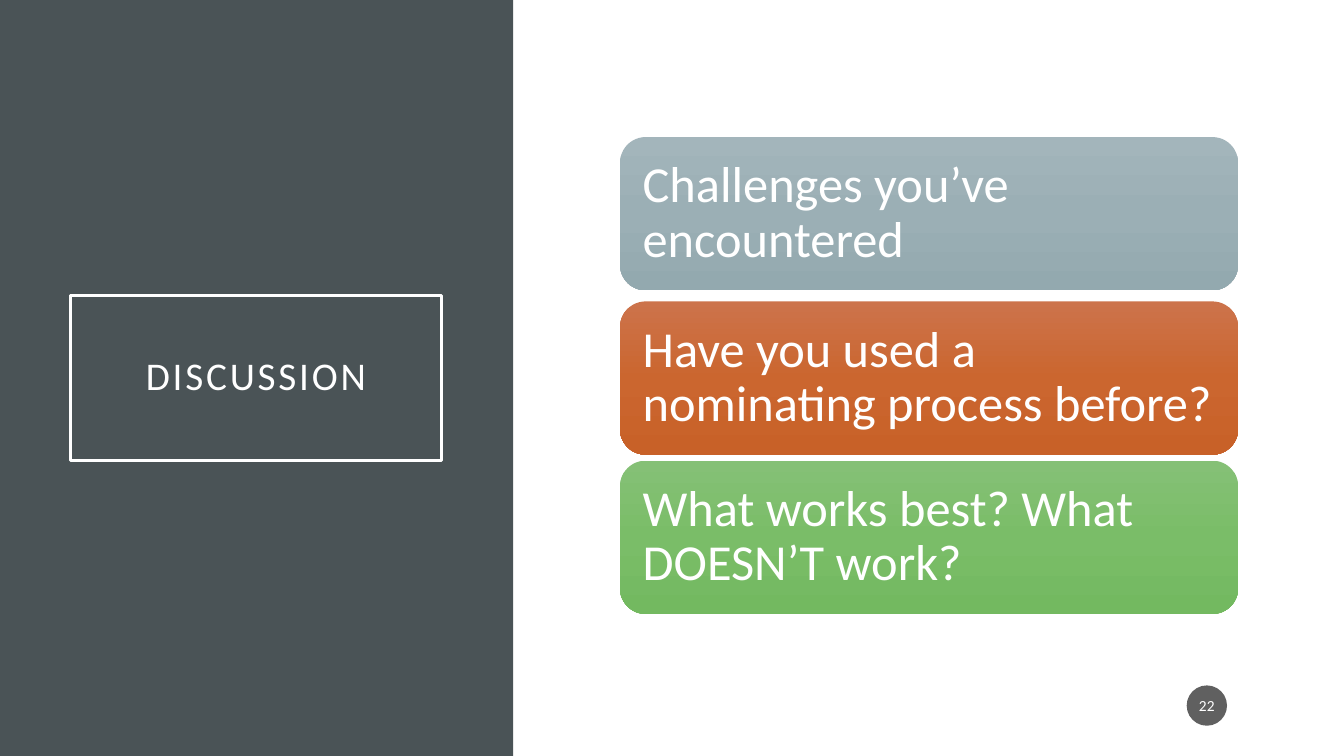
from dataclasses import dataclass

from lxml import etree
from pptx import Presentation
from pptx.dml.color import RGBColor
from pptx.enum.shapes import MSO_SHAPE
from pptx.enum.text import MSO_ANCHOR, MSO_AUTO_SIZE, PP_ALIGN
from pptx.oxml.ns import qn
from pptx.util import Pt

RECT, ROUND, OVAL = MSO_SHAPE.RECTANGLE, MSO_SHAPE.ROUNDED_RECTANGLE, MSO_SHAPE.OVAL
MIDDLE, FIXED = MSO_ANCHOR.MIDDLE, MSO_AUTO_SIZE.NONE
LEFT, CENTER = PP_ALIGN.LEFT, PP_ALIGN.CENTER
PX = 9144


@dataclass(frozen=True)
class Theme:
    """Hold the colours and type sizes of the slide."""
    font: str = "Calibri"
    white: str = "FFFFFF"
    slate: str = "4A5356"
    dark: str = "1D1D1D"
    gray: tuple = ("A3B5BB", "9BAFB5", "93A9AF")
    rust: tuple = ("CC734B", "CB662F", "C86128")
    green: tuple = ("85C076", "7ABD68", "73B960")
    title: int = 28
    card: int = 36
    badge: int = 11


THEME = Theme()
CARDS = (
    (0, "Challenges you’ve encountered", THEME.gray),
    (163, "Have you used a nominating process before?", THEME.rust),
    (321, "What works best? What DOESN’T work?", THEME.green),
)


def apply(item, values):
    """Set each named value on the item."""
    for name, value in values.items():
        setattr(item, name, value)


def place(shape, box):
    """Move the shape to a box given in px."""
    apply(shape, dict(zip(("left", "top", "width", "height"), (n * PX for n in box))))


def block(slide, kind, box):
    """Add a preset shape without line or shadow."""
    shape = slide.shapes.add_shape(kind, *(n * PX for n in box))
    shape.shadow.inherit = False
    shape.line.fill.background()
    return shape


def paint(shape, color):
    """Fill the shape with one colour."""
    shape.fill.solid()
    shape.fill.fore_color.rgb = RGBColor.from_string(color)


def shade(shape, colors):
    """Fill the shape from top to bottom with evenly spaced colours."""
    shape.fill.gradient()
    shape.fill.gradient_angle = 270
    stops = shape._element.spPr.find(qn("a:gradFill")).find(qn("a:gsLst"))
    for stop in list(stops):
        stops.remove(stop)
    for i, color in enumerate(colors):
        pos = str(100000 * i // (len(colors) - 1))
        stop = etree.SubElement(stops, qn("a:gs"), pos=pos)
        etree.SubElement(stop, qn("a:srgbClr"), val=color)


def write(shape, text, size, align, pad, lead=1.0):
    """Write white text in the shape and return its run."""
    frame = shape.text_frame
    across, down = (n * PX for n in pad)
    apply(frame, {
        "word_wrap": True, "auto_size": FIXED, "vertical_anchor": MIDDLE,
        "margin_left": across, "margin_right": across,
        "margin_top": down, "margin_bottom": down,
    })
    para = frame.paragraphs[0]
    apply(para, {"alignment": align, "line_spacing": lead})
    run = para.add_run()
    run.text = text
    apply(run.font, {"name": THEME.font, "size": Pt(size)})
    run.font.color.rgb = RGBColor.from_string(THEME.white)
    return run


def panel(slide, box):
    """Draw the side panel with the framed title on it."""
    x, y, w, h = box
    side = block(slide, RECT, box)
    paint(side, THEME.slate)
    title = slide.shapes.title
    title._element.addprevious(side._element)
    place(title, (x + 70, y + 293, w - 141, 164))
    title.line.color.rgb = RGBColor.from_string(THEME.white)
    title.line.width = Pt(2.5)
    run = write(title, "DISCUSSION", THEME.title, CENTER, (20, 20), 0.9)
    run.font._element.set("spc", "200")


def cards(slide, box):
    """Stack the question cards in the box."""
    x, y, w, h = box
    for drop, text, colors in CARDS:
        card = block(slide, ROUND, (x, y + drop, w, 152))
        shade(card, colors)
        write(card, text, THEME.card, LEFT, (15, 15), 0.9)


def badge(slide, box):
    """Draw the round page number."""
    disc = block(slide, OVAL, box)
    paint(disc, THEME.dark)
    color = disc._element.spPr.find(qn("a:solidFill"))[0]
    etree.SubElement(color, qn("a:alpha"), val="70000")
    write(disc, "22", THEME.badge, CENTER, (2, 5))


def main():
    """Build the slide and save it."""
    deck = Presentation()
    apply(deck, {"slide_width": 1333 * PX, "slide_height": 750 * PX})
    slide = deck.slides.add_slide(deck.slide_layouts[5])
    panel(slide, (0, 0, 509, 750))
    cards(slide, (615, 136, 613, 473))
    badge(slide, (1177, 680, 40, 40))
    deck.save("out.pptx")


if __name__ == "__main__":
    main()
